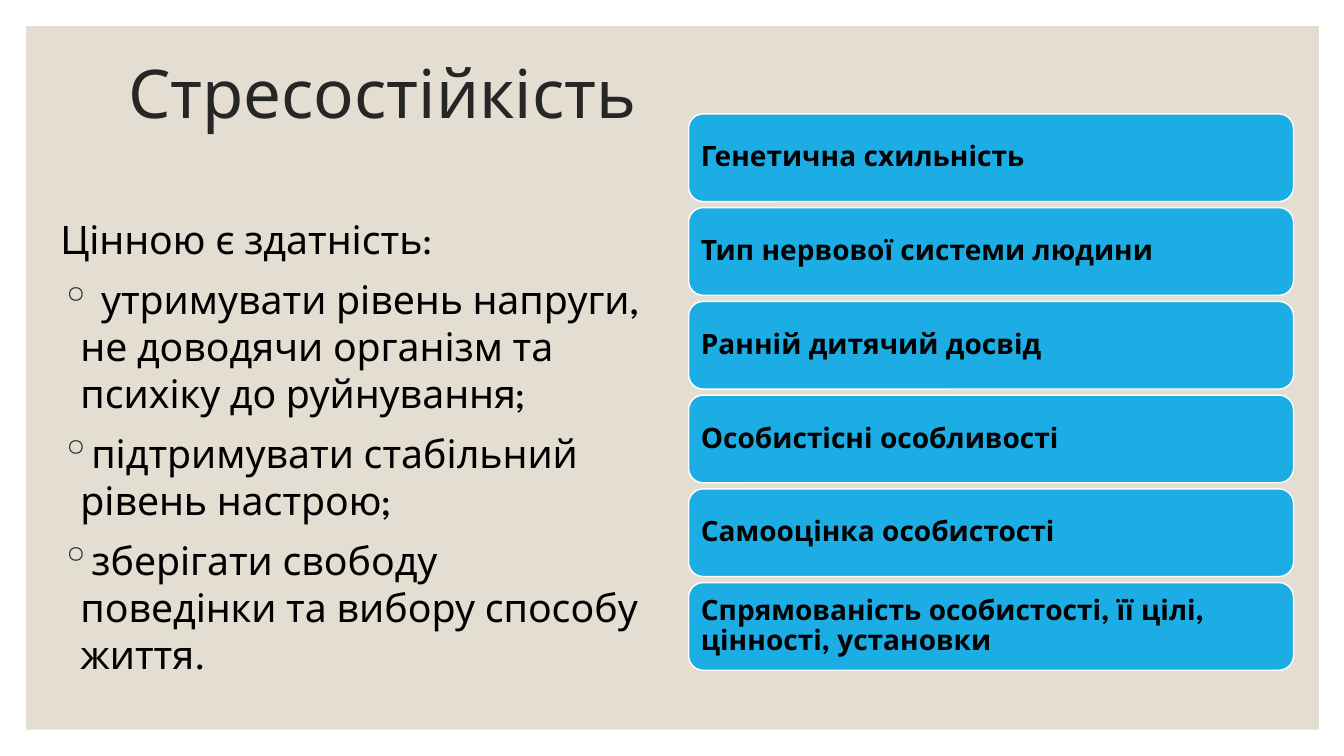
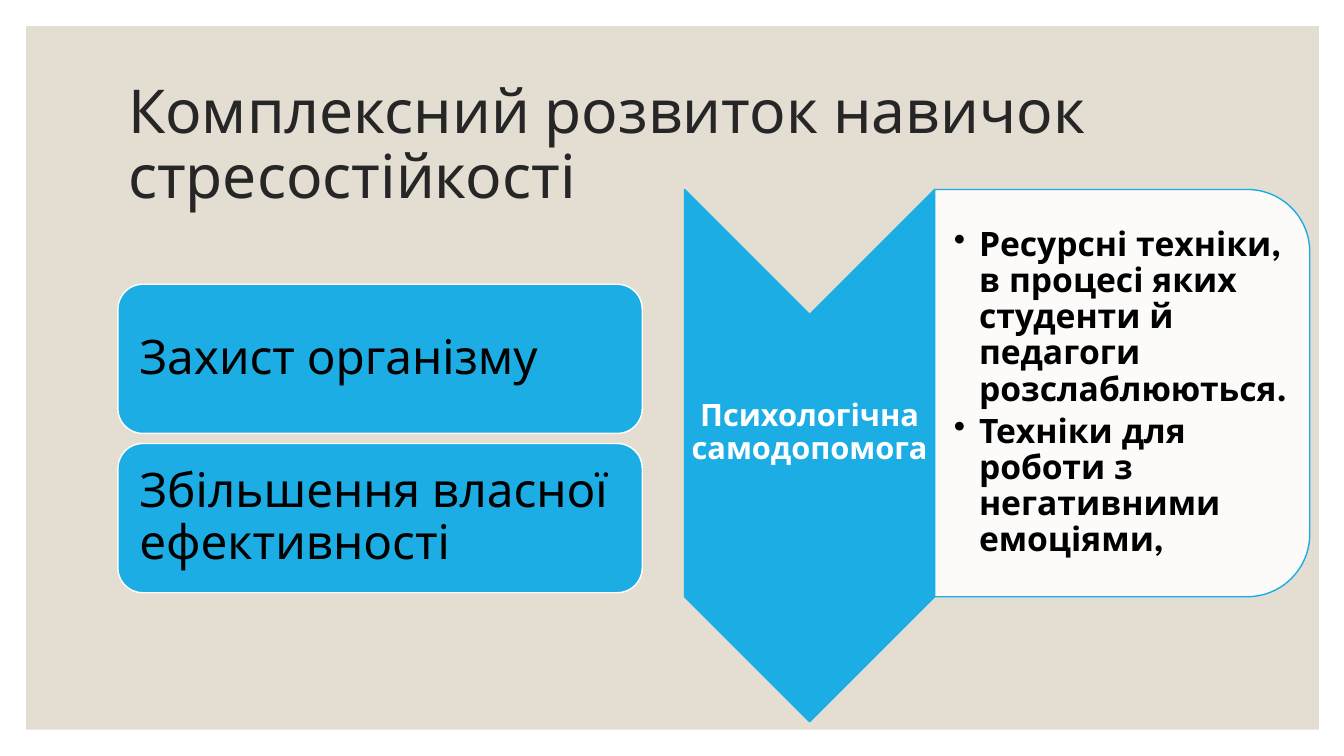
from dataclasses import dataclass

from lxml.etree import SubElement
from pptx import Presentation
from pptx.dml.color import RGBColor
from pptx.enum.shapes import MSO_SHAPE as Preset
from pptx.enum.text import MSO_ANCHOR as Anchor, MSO_AUTO_SIZE as AutoSize, PP_ALIGN as Align
from pptx.oxml.ns import qn
from pptx.util import Inches, Pt


@dataclass(frozen=True)
class Theme:
    font: str = "League Spartan"
    band: RGBColor = RGBColor(0xE3, 0xDE, 0xD1)
    accent: RGBColor = RGBColor(0x1C, 0xAD, 0xE4)
    heading: RGBColor = RGBColor(0x26, 0x26, 0x26)
    ink: RGBColor = RGBColor(0, 0, 0)
    white: RGBColor = RGBColor(0xFF, 0xFF, 0xFF)
    title_large: float = 48
    title_small: float = 43.2
    card_large: float = 34
    body: float = 28
    detail: float = 24
    label: float = 22
    card_small: float = 20
    tight: float = 0.9


class SlideBuilder:
    """Draws styled elements on the current page of a deck."""

    def __init__(self, theme):
        self.theme = theme
        self.deck = Presentation()
        self.deck.slide_width = Inches(13.33)
        self.deck.slide_height = Inches(7.5)
        self.layout = self.deck.slide_layouts[5]
        self.page = None

    def open_page(self, title, size, top, height):
        first = self.page is None
        self.page = self.deck.slides.add_slide(self.layout)
        if first:
            self.add_band_to_layout()
        box = self.page.shapes.title
        box.left, box.top, box.width, box.height = map(Inches, (1.17, top, 11, height))
        frame = self.prepare(box, Anchor.MIDDLE)
        self.add_span(frame.paragraphs[0], title, size, self.theme.heading,
                      line_spacing=self.theme.tight)

    def add_band_to_layout(self):
        band = self.shape(Preset.RECTANGLE, 0.26, 0.26, 12.82, 6.98, self.theme.band)
        band.element.nvSpPr.cNvPr.set("id", "100")
        self.layout.shapes.element.insert(2, band.element)

    def prepare(self, box, anchor, margins=None):
        frame = box.text_frame
        frame.word_wrap = True
        frame.auto_size = AutoSize.NONE
        frame.vertical_anchor = anchor
        if margins:
            (frame.margin_left, frame.margin_top,
             frame.margin_right, frame.margin_bottom) = map(Inches, margins)
        return frame

    def add_span(self, para, text, size, color, bold=False, align=Align.LEFT, line_spacing=1.0):
        para.alignment = align
        para.line_spacing = line_spacing
        span = para.add_run()
        span.text = text
        span.font.name = self.theme.font
        span.font.size = Pt(size)
        span.font.bold = bold
        span.font.color.rgb = color

    def bullet(self, para, mark, color, indent):
        properties = para._p.get_or_add_pPr()
        properties.set("marL", str(Inches(indent)))
        properties.set("indent", str(-Inches(indent)))
        tint = SubElement(properties, qn("a:buClr"))
        SubElement(tint, qn("a:srgbClr")).set("val", str(color))
        SubElement(properties, qn("a:buChar")).set("char", mark)

    def shape(self, preset, left, top, width, height, fill, line=None, rotation=0, opacity=100):
        shape = self.page.shapes.add_shape(preset, *map(Inches, (left, top, width, height)))
        shape.shadow.inherit = False
        shape.rotation = rotation
        shape.fill.solid()
        shape.fill.fore_color.rgb = fill
        if opacity < 100:
            color = shape.element.spPr.find(qn("a:solidFill"))[0]
            SubElement(color, qn("a:alpha")).set("val", str(opacity * 1000))
        if line is None:
            shape.line.fill.background()
        else:
            shape.line.color.rgb = line
            shape.line.width = Pt(1)
        return shape

    def text_box(self, left, top, width, height, anchor=Anchor.TOP, margins=None):
        box = self.page.shapes.add_textbox(*map(Inches, (left, top, width, height)))
        return self.prepare(box, anchor, margins)

    def cards(self, labels, left, top, width, height, pitch, margin, size, bold=False):
        for index, label in enumerate(labels):
            card = self.shape(Preset.ROUNDED_RECTANGLE, left, top + index * pitch,
                              width, height, self.theme.accent, self.theme.white)
            frame = self.prepare(card, Anchor.MIDDLE, [margin] * 4)
            self.add_span(frame.paragraphs[0], label, size, self.theme.ink, bold,
                          line_spacing=self.theme.tight)

    def abilities(self, intro, items):
        frame = self.text_box(0.5, 2.09, 5.97, 4.86)
        for index, text in enumerate([intro, *items]):
            para = frame.add_paragraph() if index else frame.paragraphs[0]
            para.space_before = Pt(9)
            self.add_span(para, text, self.theme.body, self.theme.ink)
            if index:
                self.bullet(para, "◦", self.theme.heading, 0.2)

    def chevron(self, label):
        theme = self.theme
        self.shape(Preset.CHEVRON, 5.39, 3.28, 5.28, 2.48, theme.accent, theme.accent, 90)
        frame = self.text_box(6.79, 2.9, 2.48, 2.8, Anchor.MIDDLE, [0.02] * 4)
        self.add_span(frame.paragraphs[0], label, theme.label, theme.white, True,
                      Align.CENTER, theme.tight)

    def techniques(self, items):
        theme = self.theme
        self.shape(Preset.ROUND_2_SAME_RECTANGLE, 9.11, 2.04, 4.04, 3.72,
                   theme.white, theme.accent, 90, opacity=90)
        frame = self.text_box(9.27, 2.06, 3.54, 3.68, Anchor.MIDDLE, (0.19, 0.02, 0.02, 0.02))
        for index, text in enumerate(items):
            para = frame.add_paragraph() if index else frame.paragraphs[0]
            para.space_after = Pt(4)
            self.add_span(para, text, theme.detail, theme.ink, True, line_spacing=theme.tight)
            self.bullet(para, "•", theme.ink, 0.25)


def main():
    theme = Theme()
    builder = SlideBuilder(theme)

    builder.open_page("Стресостійкість", theme.title_large, 0.35, 1.21)
    builder.abilities("Цінною є здатність:", [
        " утримувати рівень напруги, не доводячи організм та психіку до руйнування;",
        "підтримувати стабільний рівень настрою;",
        "зберігати свободу поведінки та вибору способу життя.",
    ])
    builder.cards([
        "Генетична схильність",
        "Тип нервової системи людини",
        "Ранній дитячий досвід",
        "Особистісні особливості",
        "Самооцінка особистості",
        "Спрямованість особистості, її цілі, цінності, установки",
    ], 6.83, 1.13, 6, 0.87, 0.93, 0.08, theme.card_small, bold=True)

    builder.open_page("Комплексний розвиток навичок стресостійкості",
                      theme.title_small, 0.7, 1.5)
    builder.cards(["Захист організму", "Збільшення власної ефективності"],
                  1.17, 2.82, 5.2, 1.48, 1.58, 0.14, theme.card_large)
    builder.chevron("Психологічна самодопомога")
    builder.techniques([
        "Ресурсні техніки, в процесі яких студенти й педагоги розслаблюються.",
        "Техніки для роботи з негативними емоціями,",
    ])

    builder.deck.save("out.pptx")


if __name__ == "__main__":
    main()
